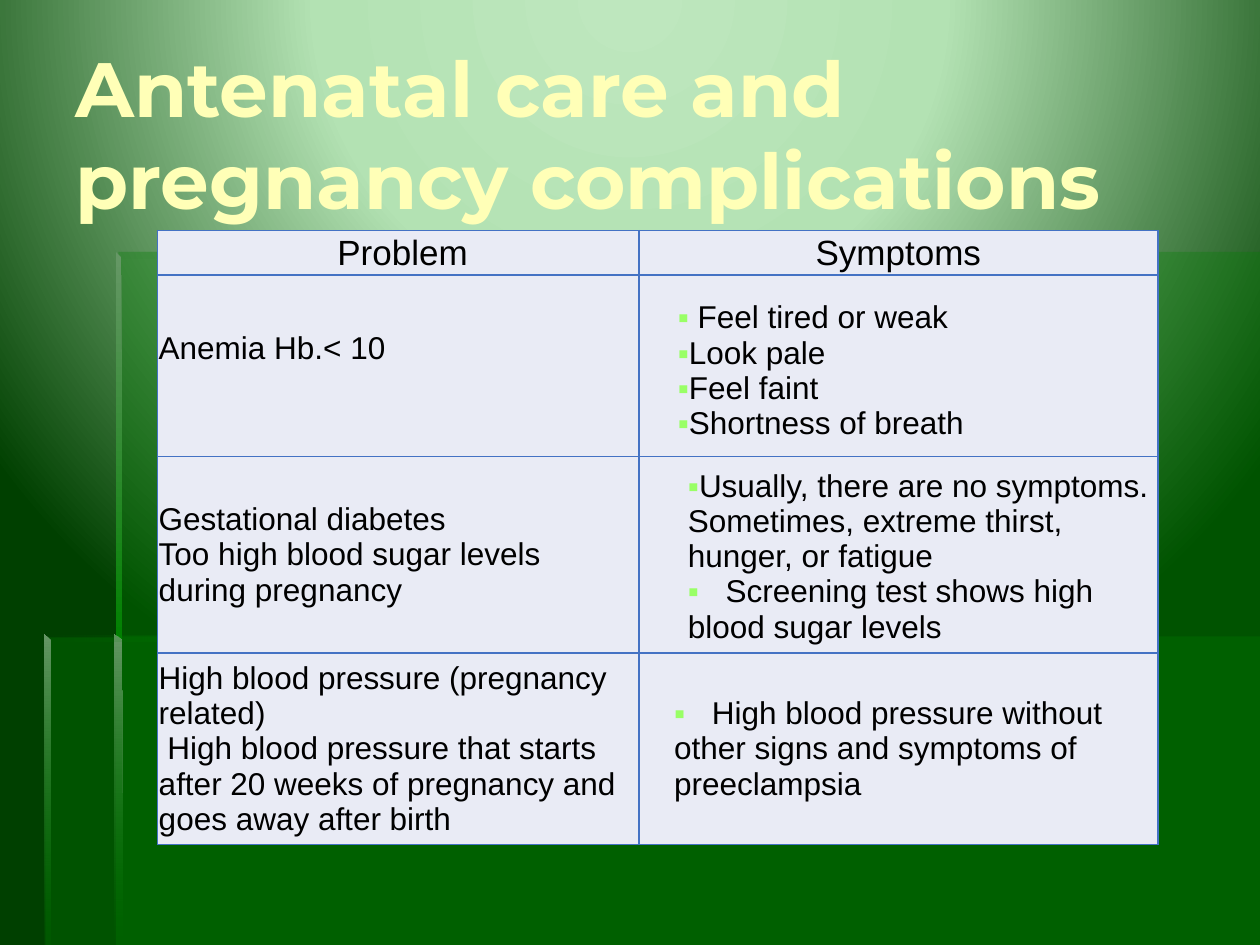
from lxml.etree import SubElement
from pptx import Presentation
from pptx.dml.color import RGBColor
from pptx.enum.shapes import MSO_SHAPE
from pptx.enum.text import MSO_ANCHOR as Anchor, PP_ALIGN as Align
from pptx.oxml import parse_xml
from pptx.oxml.ns import nsdecls, qn
from pptx.util import Inches, Pt

COLORS = {
    "glow": "BEE7BE", "mint": "B3E2B3", "forest": "004000",
    "green": "008000", "deep": "007500", "sage": "669766",
    "title": "FFFFB7", "text": "000000", "cell": "E9EBF5",
    "border": "4472C4", "bullet": "99FF66",
}
COLS, ROWS = 100, 75  # grid over the slide
LINEAR = '<a:lin ang="{}" scaled="0"/>'
RADIAL = ('<a:path path="circle"><a:fillToRect l="50000" t="-80000" '
          'r="50000" b="180000"/></a:path>')


class SlideBuilder:
    def __init__(self, prs):
        self.slide = prs.slides.add_slide(prs.slide_layouts[6])
        self.col = prs.slide_width / COLS
        self.row = prs.slide_height / ROWS

    def place(self, x, y):
        return round(x * self.col), round(y * self.row)

    def style(self, font, size, color, face="Arial", bold=False):
        font.name, font.size, font.bold = face, Pt(size), bold
        font.color.rgb = RGBColor.from_string(COLORS[color])

    def gradient(self, fill, parent, stops, direction):
        """Stops are (position %, colour, opacity %)."""
        fill.solid()
        marks = "".join(
            f'<a:gs pos="{pos * 1000}"><a:srgbClr val="{COLORS[color]}">'
            f'<a:alpha val="{opacity * 1000}"/></a:srgbClr></a:gs>'
            for pos, color, opacity in stops)
        parent.replace(parent.find(qn("a:solidFill")), parse_xml(
            f'<a:gradFill {nsdecls("a")} rotWithShape="1">'
            f'<a:gsLst>{marks}</a:gsLst>{direction}</a:gradFill>'))

    def background(self, stops):
        fill = self.slide.background.fill
        fill.solid()
        parent = self.slide.element.xpath("//p:bgPr")[0]
        self.gradient(fill, parent, stops, RADIAL)

    def finish(self, shape, stops, angle):
        shape.shadow.inherit = False
        shape.line.fill.background()
        self.gradient(shape.fill, shape.element.spPr, stops,
                      LINEAR.format(angle * 60000))

    def bar(self, x, y, width, height, stops, angle=0):
        shape = self.slide.shapes.add_shape(
            MSO_SHAPE.RECTANGLE, *self.place(x, y), *self.place(width, height))
        self.finish(shape, stops, angle)

    def outline(self, points, stops, angle=0):
        start, *rest = [self.place(x, y) for x, y in points]
        builder = self.slide.shapes.build_freeform(*start)
        builder.add_line_segments(rest, close=True)
        self.finish(builder.convert_to_shape(), stops, angle)

    def title(self, text, x, y, width, height):
        frame = self.slide.shapes.add_textbox(
            *self.place(x, y), *self.place(width, height)).text_frame
        frame.word_wrap, frame.vertical_anchor = True, Anchor.MIDDLE
        frame.text = text
        self.style(frame.paragraphs[0].font, 44, "title", "Montserrat", True)

    def bullet(self, paragraph):
        props = paragraph._p.get_or_add_pPr()
        props.set("marL", "0")
        props.set("indent", "0")
        color = SubElement(props, qn("a:buClr"))
        SubElement(color, qn("a:srgbClr"), val=COLORS["bullet"])
        SubElement(props, qn("a:buFont"), typeface="Arial")
        SubElement(props, qn("a:buChar"), char="▪")
        tabs = SubElement(props, qn("a:tabLst"))
        SubElement(tabs, qn("a:tab"), pos=str(Inches(0.3)), algn="l")

    def cell(self, cell, lines, margins, size, align, bulleted):
        (cell.margin_left, cell.margin_top,
         cell.margin_right, cell.margin_bottom) = map(Inches, margins)
        cell.vertical_anchor = Anchor.MIDDLE
        props = cell._tc.get_or_add_tcPr()
        for side in "LRTB":
            props.append(parse_xml(
                f'<a:ln{side} {nsdecls("a")} w="12700"><a:solidFill>'
                f'<a:srgbClr val="{COLORS["border"]}"/></a:solidFill></a:ln{side}>'))
        cell.fill.solid()
        cell.fill.fore_color.rgb = RGBColor.from_string(COLORS["cell"])
        cell.text_frame.text = "\n".join(lines)
        for paragraph in cell.text_frame.paragraphs:
            paragraph.alignment = align
            if bulleted:
                self.bullet(paragraph)
            # Row heights are measured from run fonts only
            for run in paragraph.runs:
                self.style(run.font, size, "text")

    def table(self, x, y, widths, heights, content, margins):
        table = self.slide.shapes.add_table(
            len(heights), len(widths), *self.place(x, y),
            *self.place(sum(widths), sum(heights))).table
        table.first_row = table.horz_banding = False
        for column, width in zip(table.columns, widths):
            column.width = round(width * self.col)
        for row, height in zip(table.rows, heights):
            row.height = round(height * self.row)
        for r, row in enumerate(content):
            for c, lines in enumerate(row):
                self.cell(table.cell(r, c), lines,
                          margins.get((r, c), (0.01,) * 4),
                          18 if r else 20, Align.LEFT if r else Align.CENTER,
                          bulleted=r > 0 and c == 1)


CONTENT = [
    (["Problem"], ["Symptoms"]),
    (["Anemia Hb.< 10"],
     [" Feel tired or weak", "Look pale", "Feel faint", "Shortness of breath"]),
    (["Gestational diabetes", "Too high blood sugar levels during pregnancy"],
     ["Usually, there are no symptoms. Sometimes, extreme thirst, hunger, or fatigue",
      "\tScreening test shows high blood sugar levels"]),
    (["High blood pressure (pregnancy related)",
      " High blood pressure that starts after 20 weeks of pregnancy and "
      "goes away after birth"],
     ["\tHigh blood pressure without other signs and symptoms of preeclampsia"]),
]
# Left, top, right, bottom by (row, column); other cells are nearly flush
MARGINS = {
    (0, 0): (0.08, 0.01, 0.01, 0.01),
    (1, 0): (0.01, 0.01, 0.01, 0.29),
    (1, 1): (0.31, 0.16, 0.16, 0.08),
    (2, 0): (0.01, 0.01, 0.06, 0.01),
    (2, 1): (0.39, 0.04, 0.01, 0.01),
    (3, 1): (0.28, 0.01, 0.01, 0.01),
}


def main():
    prs = Presentation()
    prs.slide_width, prs.slide_height = Inches(10), Inches(7.5)
    page = SlideBuilder(prs)
    page.background([(0, "glow", 100), (40, "mint", 100), (100, "forest", 100)])

    # Translucent panels
    veil = [(0, "green", 30), (100, "green", 30)]
    page.bar(9.2, 50.5, 90.8, 24.5, veil)
    page.outline([(9.4, 50.6), (3.6, 50.6), (3.6, ROWS), (COLS, ROWS),
                  (COLS, 20), (9.4, 20)], veil)

    # Panel edges
    across = [(0, "green", 0), (100, "deep", 100)]
    page.bar(9.2, 20, 80, 0.5, across)
    page.outline([(9.2, 20), (9.2, 51), (9.7, 51), (9.6, 20.4)],
                 [(0, "sage", 100), (100, "green", 100)], 90)
    page.outline([(9.1, ROWS), (9.7, ROWS), (9.6, 50.8), (9.1, 50.4)],
                 [(0, "sage", 100), (100, "green", 0)], 90)
    page.bar(3.5, 50.4, 50, 0.5, across)
    page.outline([(3.5, 50.4), (3.5, ROWS), (4, ROWS), (4, 50.9)],
                 [(0, "sage", 100), (100, "green", 10)], 90)

    # Title and table
    page.title("Antenatal care and pregnancy complications", 5, 2.7, 91.7, 15.7)
    page.table(12.5, 18.3, [38.2, 41.2], [3.2, 14, 15.6, 12.5], CONTENT, MARGINS)

    prs.save("out.pptx")


if __name__ == "__main__":
    main()
